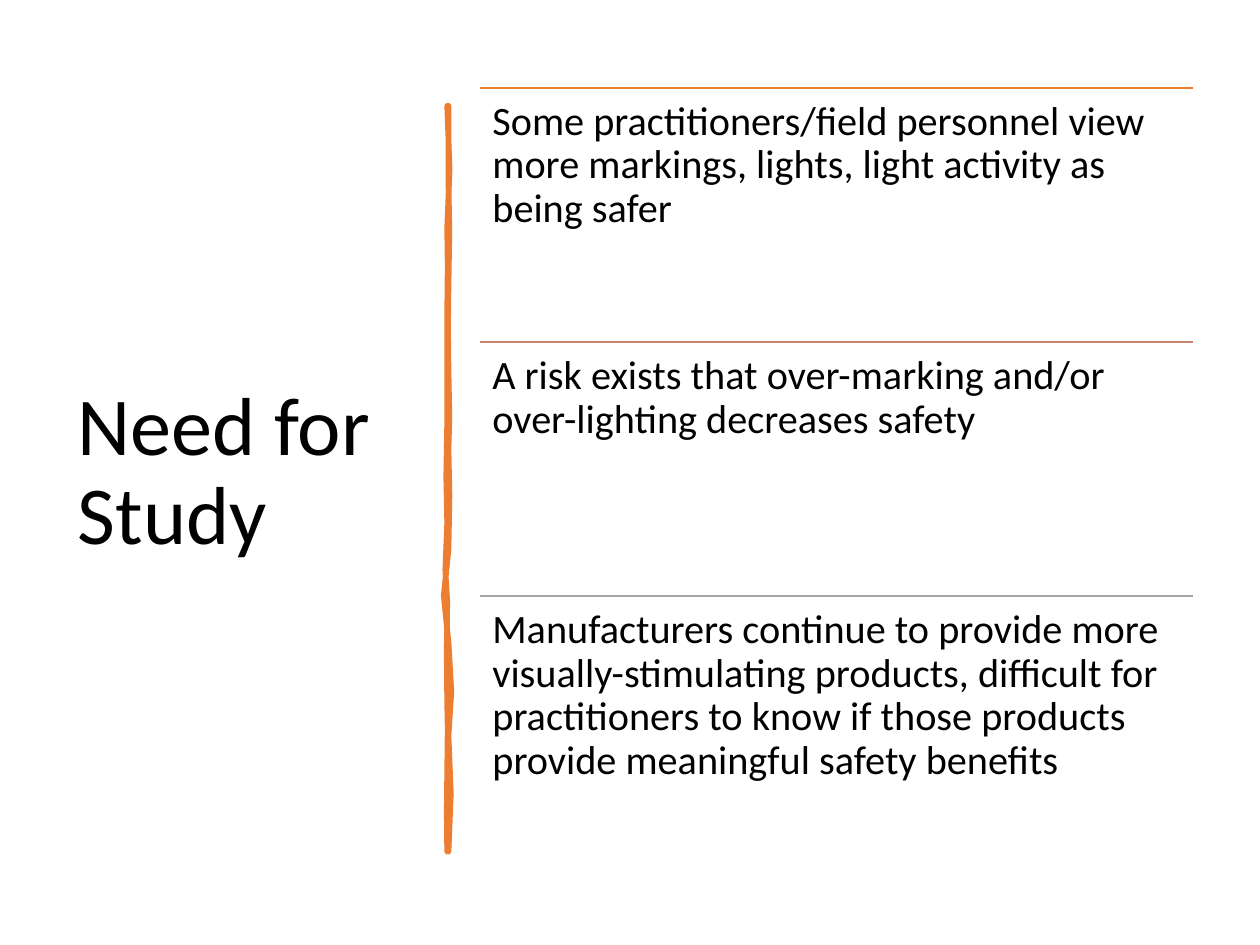
from dataclasses import dataclass

from lxml.etree import SubElement
from pptx import Presentation
from pptx.dml.color import RGBColor
from pptx.enum.shapes import MSO_CONNECTOR
from pptx.enum.text import MSO_ANCHOR
from pptx.oxml.ns import qn
from pptx.util import Inches, Pt


@dataclass(frozen=True)
class Theme:
    font: str = "Calibri"
    text: str = "000000"
    accent: str = "ED7D31"
    title_size: float = 47
    body_size: float = 23
    rule_width: float = 1
    brush_width: float = 3.25


THEME = Theme()

REASONS = [
    ("ED7D31", "Some practitioners/field personnel view more markings, lights, "
               "light activity as being safer"),
    ("C48170", "A risk exists that over-marking and/or over-lighting decreases safety"),
    ("A5A5A5", "Manufacturers continue to provide more visually-stimulating products, "
               "difficult for practitioners to know if those products provide "
               "meaningful safety benefits"),
]
REASONS_LEFT, REASONS_TOP = 3.81, 0.7
REASONS_WIDTH, REASONS_HEIGHT = 5.66, 6.05

# The brush edge starts here; each row is one Bezier curve: two controls, then the end.
BRUSH_START = (3.56, 0.84)
BRUSH_CURVES = [
    (3.55, 1.03, 3.57, 1.16, 3.56, 1.46), (3.57, 1.74, 3.57, 1.91, 3.56, 2.26),
    (3.55, 2.58, 3.56, 2.62, 3.56, 2.94), (3.55, 3.25, 3.59, 3.42, 3.56, 3.56),
    (3.53, 3.72, 3.61, 4.14, 3.56, 4.36), (3.49, 4.62, 3.53, 4.83, 3.56, 5.1),
    (3.56, 5.35, 3.62, 5.63, 3.56, 5.84), (3.56, 6.06, 3.61, 6.53, 3.56, 6.76),
    (3.56, 6.75, 3.55, 6.76, 3.55, 6.76), (3.56, 6.45, 3.53, 6.44, 3.55, 6.13),
    (3.56, 5.83, 3.55, 5.7, 3.55, 5.57), (3.53, 5.46, 3.56, 4.94, 3.55, 4.77),
    (3.55, 4.62, 3.51, 4.47, 3.55, 4.15), (3.56, 3.86, 3.52, 3.73, 3.55, 3.35),
    (3.54, 3, 3.56, 2.79, 3.55, 2.5), (3.54, 2.16, 3.57, 2.03, 3.55, 1.81),
    (3.55, 1.65, 3.6, 1.04, 3.55, 0.84),
]


def rgb(value):
    return RGBColor.from_string(value)


def add_text(page, text, left, top, width, height, size,
             anchor=MSO_ANCHOR.TOP, inset=0.1):
    """Add a wrapped text box; inset is its top and bottom margin."""
    box = page.shapes.add_textbox(Inches(left), Inches(top), Inches(width), Inches(height))
    frame = box.text_frame
    frame.text = text
    frame.word_wrap = True
    frame.vertical_anchor = anchor
    frame.margin_top = frame.margin_bottom = Inches(inset)
    para = frame.paragraphs[0]
    para.line_spacing = 0.9
    font = para.runs[0].font
    font.name = THEME.font
    font.size = Pt(size)
    font.color.rgb = rgb(THEME.text)


def add_rule(page, left, top, width, color):
    rule = page.shapes.add_connector(MSO_CONNECTOR.STRAIGHT, Inches(left), Inches(top),
                                     Inches(left + width), Inches(top))
    rule.line.color.rgb = rgb(color)
    rule.line.width = Pt(THEME.rule_width)
    SubElement(rule.element.spPr, qn("a:effectLst"))


def edge_points(start, curves):
    """Return the middle and the end of each curve in a chain, in EMU."""
    points = []
    x0, y0 = start
    for x1, y1, x2, y2, x3, y3 in curves:
        middle_x = (x0 + 3 * x1 + 3 * x2 + x3) / 8
        middle_y = (y0 + 3 * y1 + 3 * y2 + y3) / 8
        points += [(Inches(middle_x), Inches(middle_y)), (Inches(x3), Inches(y3))]
        x0, y0 = x3, y3
    return points


def add_brush_stroke(page):
    start_x, start_y = BRUSH_START
    builder = page.shapes.build_freeform(Inches(start_x), Inches(start_y))
    builder.add_line_segments(edge_points(BRUSH_START, BRUSH_CURVES), close=True)
    brush = builder.convert_to_shape()
    brush.shadow.inherit = False
    brush.fill.solid()
    brush.fill.fore_color.rgb = rgb(THEME.accent)
    brush.line.color.rgb = rgb(THEME.accent)
    brush.line.width = Pt(THEME.brush_width)
    SubElement(brush.element.spPr.find(qn("a:ln")), qn("a:round"))


def main():
    deck = Presentation()
    deck.slide_width, deck.slide_height = Inches(10), Inches(7.5)
    page = deck.slides.add_slide(deck.slide_layouts[6])

    add_text(page, "Need for Study", 0.52, 0.7, 2.8, 6.11, THEME.title_size,
             MSO_ANCHOR.MIDDLE, inset=0.05)
    add_brush_stroke(page)
    row_height = REASONS_HEIGHT / len(REASONS)
    for index, (color, reason) in enumerate(REASONS):
        top = REASONS_TOP + index * row_height
        add_rule(page, REASONS_LEFT, top, REASONS_WIDTH, color)
        add_text(page, reason, REASONS_LEFT, top, REASONS_WIDTH, row_height,
                 THEME.body_size)

    deck.save("out.pptx")


if __name__ == "__main__":
    main()
